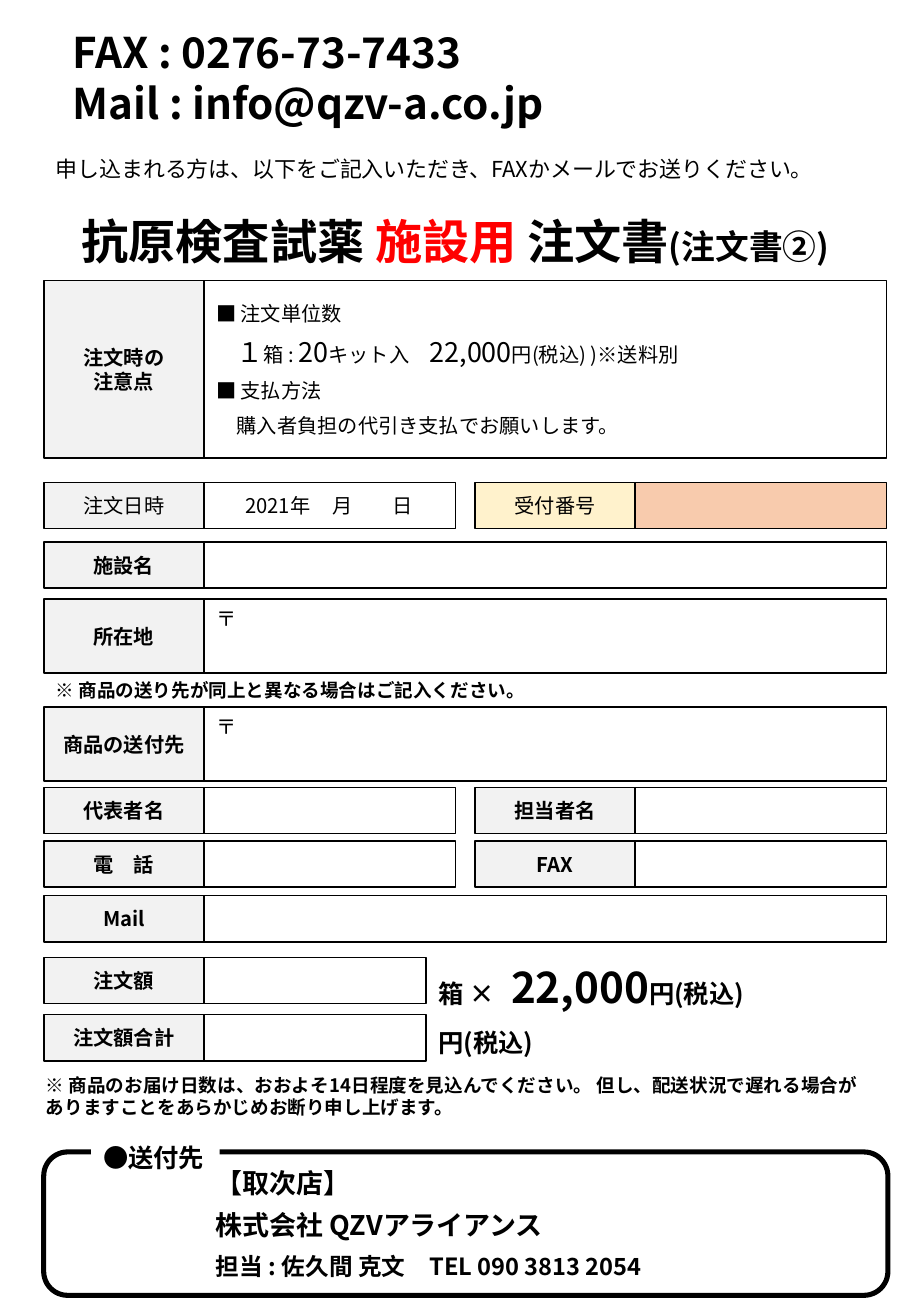
from dataclasses import dataclass, field
from lxml import etree
from pptx import Presentation
from pptx.dml.color import RGBColor
from pptx.enum.shapes import MSO_SHAPE
from pptx.enum.text import MSO_ANCHOR, MSO_AUTO_SIZE, PP_ALIGN
from pptx.oxml.ns import qn
from pptx.util import Inches, Pt

RECT, ROUNDED = MSO_SHAPE.RECTANGLE, MSO_SHAPE.ROUNDED_RECTANGLE
TOP, MIDDLE = MSO_ANCHOR.TOP, MSO_ANCHOR.MIDDLE
LEFT, CENTER = PP_ALIGN.LEFT, PP_ALIGN.CENTER
GROW, FIXED = MSO_AUTO_SIZE.SHAPE_TO_FIT_TEXT, MSO_AUTO_SIZE.NONE


@dataclass
class Theme:
    font: str = "Noto Sans CJK JP"
    ink: str = "000000"
    accent: str = "FF0000"
    paper: str = "FFFFFF"
    label: str = "F2F2F2"
    receipt_label: str = "FFF2CC"
    receipt_field: str = "F8CBAD"
    cell_line: float = 1
    frame_line: float = 3
    sizes: dict = field(default_factory=lambda: {
        "note": 11, "cell": 12, "intro": 13, "contact": 14, "total": 15,
        "unit": 16, "suffix": 20, "large": 25, "title": 28})


THEME = Theme()
PAGE_W, PAGE_H = 7.5, 10.83

EDGE, LABEL_W, HALF_W, SHORT_W, FULL_W = 0.36, 1.32, 2.07, 1.83, 5.62
FIELD_X = EDGE + LABEL_W
RIGHT_X = 3.91
FORM_W = 6.95
LINE_H, ADDRESS_H, NOTICE_H = 0.38, 0.61, 1.46
AFTER_FIELD = FIELD_X + SHORT_W
AFTER_W = 3.79

ORDER_NOTICE = [
    ([("■ 注文単位数", "cell")], {"space_after": 6}),
    ([("１", "unit"), ("箱 : ", "cell"), ("20", "unit"), ("キット入　", "cell"),
      ("22,000", "unit"), ("円(税込) )※送料別", "cell")],
     {"space_after": 6, "indent": 0.17}),
    ([("■ 支払方法", "cell")], {"space_after": 6}),
    ([("購入者負担の代引き支払でお願いします。", "cell")], {"indent": 0.17}),
]
ORDER_DATE = [([("2021年\t月\t日", "cell")], {"tabs": (0.72, 1.21)})]
POSTCODE = [([("〒", "cell")], {})]
AT_TOP = {"vertical_anchor": TOP, "margin_top": Inches(0.06)}
AT_DATE = {"margin_left": Inches(0.34)}
PLAIN = {"bold": False}
RECEIPT = {"bold": False, "fill": THEME.receipt_label}

FORM_ROWS = [
    (EDGE, 2.31, NOTICE_H, FULL_W, ["注文時の", "注意点"], {}, ORDER_NOTICE, {}),
    (EDGE, 3.97, LINE_H, HALF_W, ["注文日時"], PLAIN, ORDER_DATE, AT_DATE),
    (RIGHT_X, 3.97, LINE_H, HALF_W, ["受付番号"], RECEIPT, [], {}),
    (EDGE, 4.46, LINE_H, FULL_W, ["施設名"], {}, [], {}),
    (EDGE, 4.93, ADDRESS_H, FULL_W, ["所在地"], {}, POSTCODE, AT_TOP),
    (EDGE, 5.82, ADDRESS_H, FULL_W, ["商品の送付先"], {}, POSTCODE, AT_TOP),
    (EDGE, 6.48, LINE_H, HALF_W, ["代表者名"], {}, [], {}),
    (RIGHT_X, 6.48, LINE_H, HALF_W, ["担当者名"], {}, [], {}),
    (EDGE, 6.92, LINE_H, HALF_W, ["電　話"], {}, [], {}),
    (RIGHT_X, 6.92, LINE_H, HALF_W, ["FAX"], {}, [], {}),
    (EDGE, 7.37, LINE_H, FULL_W, ["Mail"], {}, [], {}),
    (EDGE, 7.88, LINE_H, SHORT_W, ["注文額"], {}, [], {}),
    (EDGE, 8.35, LINE_H, SHORT_W, ["注文額合計"], {}, [], {}),
]

FREE_TEXTS = [
    ((0, 0.17, PAGE_W, 0.94), True, [
        ([("FAX : 0276-73-7433", "large")], {"indent": 0.5}),
        ([("Mail : info@qzv-a.co.jp", "large")], {"indent": 0.5})]),
    ((EDGE, 1.12, 6.78, 0.4), False, [
        ([("申し込まれる方は、以下をご記入いただき、FAXかメールでお送りください。",
           "intro")], {"line_spacing": 1.5})]),
    ((0, 1.7, PAGE_W, 0.57), True, [
        ([("抗原検査試薬 ", "title"), ("施設用 ", "title", THEME.accent),
          ("注文書", "title"), ("(注文書②)", "suffix")], {"alignment": CENTER})]),
    ((EDGE, 5.54, FORM_W, 0.29), True, [
        ([("※ 商品の送り先が同上と異なる場合はご記入ください。", "note")], {})]),
    ((AFTER_FIELD, 7.86, AFTER_W, 0.52), True, [
        ([("箱 ×\t", "total"), ("22,000", "large"), ("円(税込)", "total")],
         {"tabs": (0.6,)})]),
    ((AFTER_FIELD, 8.4, AFTER_W, 0.35), True, [([("円(税込)", "total")], {})]),
    ((0.28, 8.79, FORM_W, 0.47), True, [
        ([("※ 商品のお届け日数は、おおよそ14日程度を見込んでください。 "
           "但し、配送状況で遅れる場合がありますことをあらかじめお断り申し上げます。",
           "note")], {})]),
    ((FIELD_X, 9.55, 5.46, 1.04), True, [
        ([("【取次店】", "unit")], {"space_after": 6}),
        ([("株式会社 QZVアライアンス", "unit")], {"space_after": 6}),
        ([("担当 : 佐久間 克文　TEL 090 3813 2054", "contact")], {})]),
]
DESTINATION_FRAME = (EDGE, 9.48, FORM_W, 1.18)
DESTINATION_TAG = (0.75, 9.35, 1.06, 0.35)
DESTINATION = [([("●送付先", "total")], {})]


def put(target, values):
    for name, value in values.items():
        setattr(target, name, value)


def write(shape, paragraphs, bold, frame_format):
    frame = shape.text_frame
    put(frame, {"word_wrap": True, **frame_format})
    for index, (runs, layout) in enumerate(paragraphs):
        paragraph = frame.add_paragraph() if index else frame.paragraphs[0]
        paragraph.alignment = layout.get("alignment", LEFT)
        if "line_spacing" in layout:
            paragraph.line_spacing = layout["line_spacing"]
        if "space_after" in layout:
            paragraph.space_after = Pt(layout["space_after"])
        properties = paragraph._p.get_or_add_pPr()
        if "indent" in layout:
            properties.set("marL", str(Inches(layout["indent"])))
            properties.set("indent", "0")
        if "tabs" in layout:
            stops = etree.SubElement(properties, qn("a:tabLst"))
            for stop in layout["tabs"]:
                etree.SubElement(stops, qn("a:tab"), pos=str(Inches(stop)), algn="l")
        for text, size, *color in runs:
            run = paragraph.add_run()
            run.text = text
            put(run.font, {"size": Pt(THEME.sizes[size]), "bold": bold,
                           "name": THEME.font})
            run.font.fill.solid()
            run.font.fill.fore_color.rgb = RGBColor.from_string(
                color[0] if color else THEME.ink)
            etree.SubElement(run.font._element, qn("a:ea"), typeface=THEME.font)


def draw(slide, kind, box, fill=None, line=None):
    shape = slide.shapes.add_shape(kind, *map(Inches, box))
    shape.shadow.inherit = False
    if fill:
        shape.fill.solid()
        shape.fill.fore_color.rgb = RGBColor.from_string(fill)
    else:
        shape.fill.background()
    if line:
        shape.line.width = Pt(line)
        shape.line.color.rgb = RGBColor.from_string(THEME.ink)
    else:
        shape.line.fill.background()
    return shape


def draw_row(slide, left, top, height, width, label, style, content, content_format):
    fill = style.get("fill", THEME.label)
    field_fill = THEME.receipt_field if "fill" in style else THEME.paper
    label_cell = draw(slide, RECT, (left, top, LABEL_W, height), fill, THEME.cell_line)
    lines = [([(text, "cell")], {"alignment": CENTER}) for text in label]
    write(label_cell, lines, style.get("bold", True), {"vertical_anchor": MIDDLE})
    field_cell = draw(slide, RECT, (left + LABEL_W, top, width, height),
                      field_fill, THEME.cell_line)
    write(field_cell, content, False,
          {"vertical_anchor": MIDDLE, "auto_size": FIXED, **content_format})


def main():
    deck = Presentation()
    put(deck, {"slide_width": Inches(PAGE_W), "slide_height": Inches(PAGE_H)})
    slide = deck.slides.add_slide(deck.slide_layouts[6])
    for row in FORM_ROWS:
        draw_row(slide, *row)
    draw(slide, ROUNDED, DESTINATION_FRAME, line=THEME.frame_line)
    tag = draw(slide, RECT, DESTINATION_TAG, THEME.paper)
    write(tag, DESTINATION, True, {"vertical_anchor": TOP, "auto_size": GROW})
    for box, bold, paragraphs in FREE_TEXTS:
        text = slide.shapes.add_textbox(*map(Inches, box))
        write(text, paragraphs, bold, {"auto_size": GROW})
    deck.save("out.pptx")


if __name__ == "__main__":
    main()
